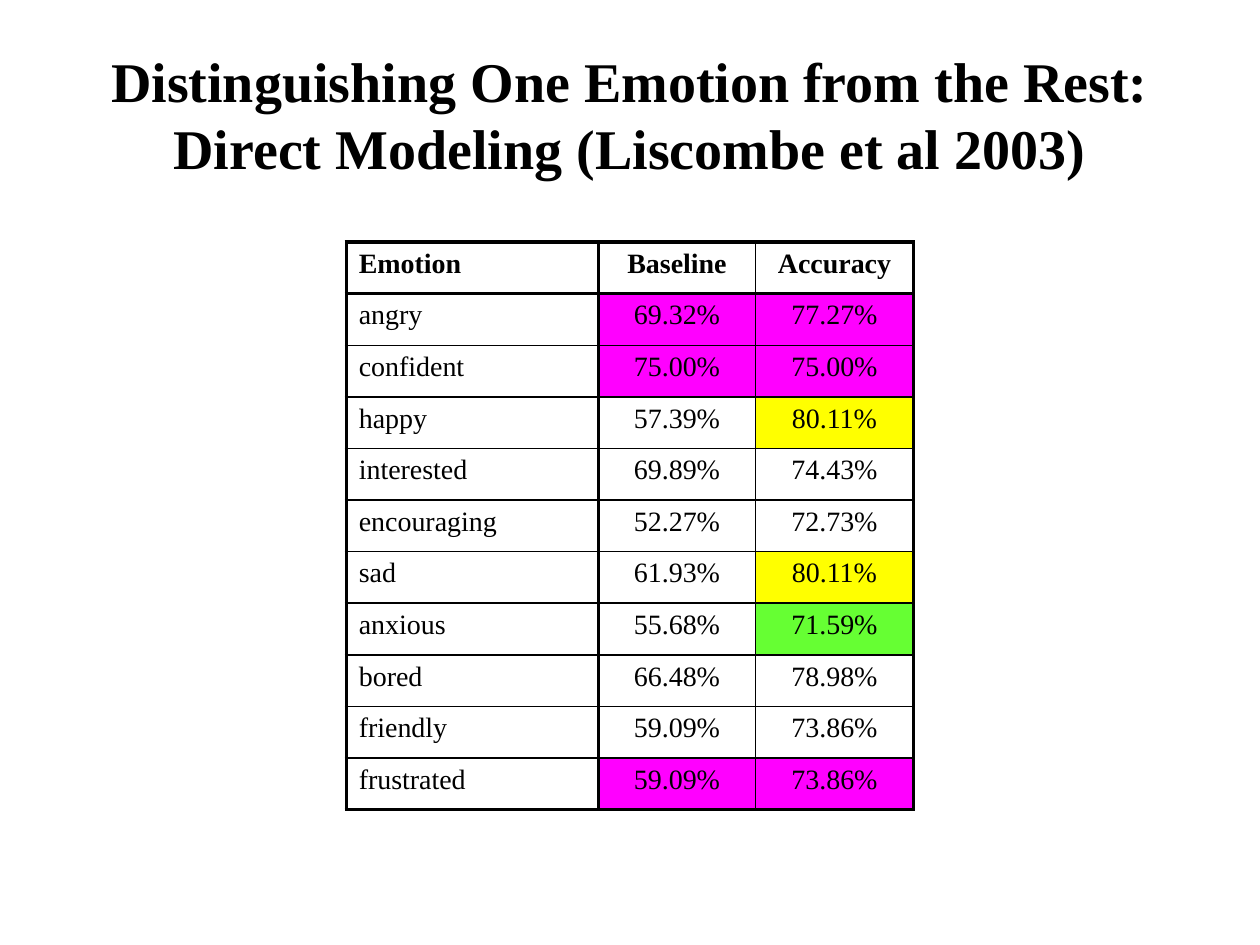
from lxml.etree import SubElement as Sub
from pptx import Presentation
from pptx.dml.color import RGBColor
from pptx.enum.text import MSO_ANCHOR as Anchor, MSO_AUTO_SIZE as Auto, PP_ALIGN as Align
from pptx.oxml.ns import qn
from pptx.util import Cm, Pt

FONT = "Times New Roman"
BLACK, PINK, GOLD, GREEN = "000000", "FF00FF", "FFFF00", "66FF33"
THIN, THICK = 1, 2.25
WIDTHS = 5.08, 3.175, 3.175
HEIGHT = 1.04
HEAD = "Emotion", "Baseline", "Accuracy"
SCORES = [
    ("angry", "69.32%", "77.27%"),
    ("confident", "75.00%", "75.00%"),
    ("happy", "57.39%", "80.11%"),
    ("interested", "69.89%", "74.43%"),
    ("encouraging", "52.27%", "72.73%"),
    ("sad", "61.93%", "80.11%"),
    ("anxious", "55.68%", "71.59%"),
    ("bored", "66.48%", "78.98%"),
    ("friendly", "59.09%", "73.86%"),
    ("frustrated", "59.09%", "73.86%"),
]
# Fills of the baseline and accuracy cells
MARKS = {
    "angry": (PINK, PINK),
    "confident": (PINK, PINK),
    "happy": (None, GOLD),
    "sad": (None, GOLD),
    "anxious": (None, GREEN),
    "frustrated": (PINK, PINK),
}


def color(code):
    return RGBColor.from_string(code)


def write(frame, text, size=16, bold=False, align=Align.LEFT):
    par = frame.paragraphs[0]
    par.alignment = align
    run = par.add_run()
    run.text = text
    font = run.font
    font.name, font.size, font.bold = FONT, Pt(size), bold
    font.color.rgb = color(BLACK)


def add_title(slide, text):
    title = slide.shapes.title
    title.left, title.top = Cm(1.27), Cm(0.76)
    title.width, title.height = Cm(22.86), Cm(3.05)
    frame = title.text_frame
    frame.auto_size = Auto.NONE
    frame.word_wrap = True
    frame.vertical_anchor = Anchor.MIDDLE
    write(frame, text, size=32, bold=True, align=Align.CENTER)


def edge(cell, **sides):
    """Draw black borders; each side (L, R, T, B) has a width in points."""
    props = cell._tc.get_or_add_tcPr()
    for side, width in sides.items():
        line = Sub(props, qn(f"a:ln{side}"), w=str(Pt(width)))
        fill = Sub(line, qn("a:solidFill"))
        Sub(fill, qn("a:srgbClr"), val=BLACK)


def paint(cell, code):
    if code:
        cell.fill.solid()
        cell.fill.fore_color.rgb = color(code)
    else:
        cell.fill.background()


def add_grid(slide, rows):
    last = len(rows) - 1
    frame = slide.shapes.add_table(
        len(rows), len(WIDTHS), Cm(6.98), Cm(4.88),
        Cm(sum(WIDTHS)), Cm(HEIGHT * len(rows)))
    table = frame.table
    table.horz_banding = False
    for col, width in zip(table.columns, WIDTHS):
        col.width = Cm(width)
    for r, row in enumerate(rows):
        table.rows[r].height = Cm(HEIGHT)
        fills = (None, *MARKS.get(row[0], (None, None)))
        for c, text in enumerate(row):
            cell = table.cell(r, c)
            edge(cell,
                 L=THIN if c == 2 else THICK,
                 R=THIN if c == 1 else THICK,
                 T=THICK if r < 2 else THIN,
                 B=THICK if r in (0, last) else THIN)
            paint(cell, fills[c])
            write(cell.text_frame, text, bold=r == 0,
                  align=Align.CENTER if c else Align.LEFT)


def main():
    deck = Presentation()
    deck.slide_width, deck.slide_height = Cm(25.4), Cm(19.05)
    slide = deck.slides.add_slide(deck.slide_layouts[5])
    add_title(slide, "Distinguishing One Emotion from the Rest: "
                     "Direct Modeling (Liscombe et al 2003)")
    add_grid(slide, [HEAD, *SCORES])
    deck.save("out.pptx")


if __name__ == "__main__":
    main()
